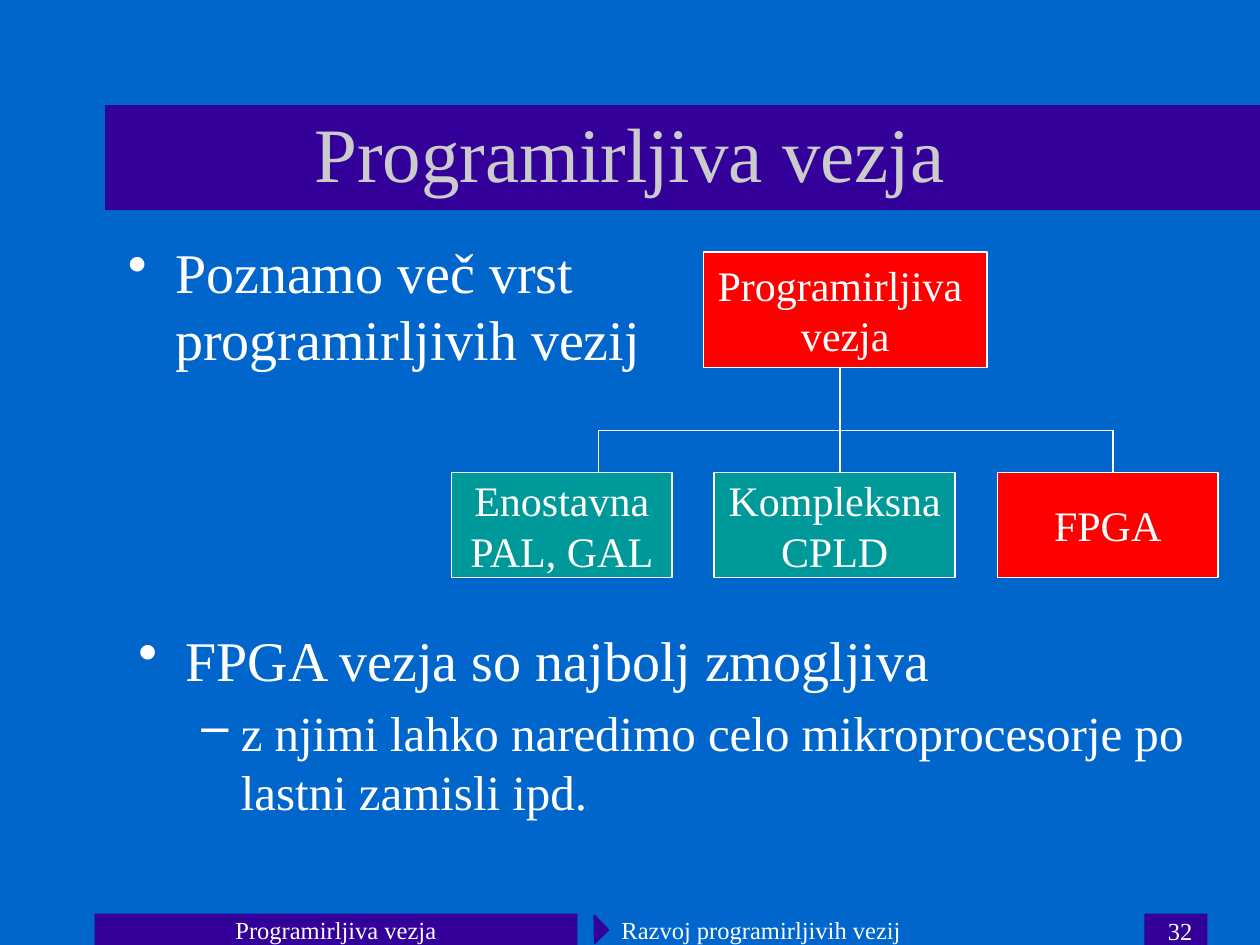
from lxml.etree import SubElement
from pptx import Presentation
from pptx.dml.color import RGBColor
from pptx.enum.shapes import MSO_CONNECTOR as CONN, MSO_SHAPE as SHAPE
from pptx.enum.text import MSO_ANCHOR as ANCHOR, PP_ALIGN as ALIGN
from pptx.oxml.ns import qn
from pptx.util import Pt

COLORS = {"back": "0066CC", "band": "330099", "title": "CBCBCB",
          "text": "FFFFFF", "teal": "009999", "red": "FF0000"}
FONT = "Times New Roman"


def rgb(name):
    """Return the named colour."""
    return RGBColor.from_string(COLORS[name])


def add_box(s, box, fill, line=None, kind=SHAPE.RECTANGLE):
    """Add a filled shape with an optional outline."""
    sp = s.shapes.add_shape(kind, *map(Pt, box))
    sp.shadow.inherit = False
    sp.fill.solid()
    sp.fill.fore_color.rgb = rgb(fill)
    if line:
        sp.line.color.rgb = rgb(line)
        sp.line.width = Pt(1)
    else:
        sp.line.fill.background()
    return sp


def add_line(s, x1, y1, x2, y2):
    """Add a thin straight line."""
    c = s.shapes.add_connector(CONN.STRAIGHT, *map(Pt, (x1, y1, x2, y2)))
    c.line.color.rgb = rgb("text")
    c.line.width = Pt(1)
    SubElement(c._element.spPr, qn("a:effectLst"))


def write(p, text, size, align=ALIGN.LEFT, color="text", before=0):
    """Write one run, with the space before it in percent."""
    p.alignment = align
    if before:
        p.space_before = Pt(0)
        spacing = p._p.pPr.find(qn("a:spcBef"))
        spacing.remove(spacing[0])
        SubElement(spacing, qn("a:spcPct"), val=str(before * 1000))
    r = p.add_run()
    r.text = text
    r.font.name = FONT
    r.font.size = Pt(size)
    r.font.color.rgb = rgb(color)


def add_text(s, box, anchor=ANCHOR.TOP):
    """Add a wrapping text box and return its text frame."""
    tf = s.shapes.add_textbox(*map(Pt, box)).text_frame
    tf.word_wrap = True
    tf.vertical_anchor = anchor
    return tf


def add_title(s, box, text):
    """Place the title over its band."""
    x, y, w, h = box
    add_box(s, (x + 6, y + 12, 720 - x - 6, 60), "band")
    tf = add_text(s, box, ANCHOR.MIDDLE)
    write(tf.paragraphs[0], text, 44, ALIGN.CENTER, "title")


def add_bullets(s, box, items):
    """Place bulleted items given as level and text."""
    styles = [("•", 32, 27, -27), ("–", 28, 58.5, -22.5)]
    tf = add_text(s, box)
    for i, (level, text) in enumerate(items):
        char, size, margin, indent = styles[level]
        p = tf.add_paragraph() if i else tf.paragraphs[0]
        p.level = level
        write(p, text, size, before=20)
        pPr = p._p.get_or_add_pPr()
        pPr.set("marL", str(Pt(margin)))
        pPr.set("indent", str(Pt(indent)))
        SubElement(pPr, qn("a:buChar"), char=char)


def add_node(s, box, fill, lines):
    """Place one labelled box of the tree."""
    tf = add_box(s, box, fill, "text").text_frame
    tf.word_wrap = False
    tf.vertical_anchor = ANCHOR.MIDDLE
    for i, text in enumerate(lines):
        p = tf.add_paragraph() if i else tf.paragraphs[0]
        write(p, text, 24, ALIGN.CENTER)


def add_tree(s, box):
    """Place the root, its three kinds and the branches."""
    x, y, w, h = box
    bus, leaf_y, leaf_h, gap = y + 102, y + 126, 60, 24
    leaves = [(126, 84, "teal", ["Enostavna", "PAL, GAL"]),
              (138, 222, "teal", ["Kompleksna", "CPLD"]),
              (126, 378, "red", ["FPGA"])]
    add_line(s, x + 222, y + 66, x + 222, bus)
    add_line(s, x + leaves[0][1], bus, x + leaves[-1][1], bus)
    left = x
    for width, branch, fill, lines in leaves:
        add_line(s, x + branch, bus, x + branch, leaf_y)
        add_node(s, (left, leaf_y, width, leaf_h), fill, lines)
        left += width + gap
    add_node(s, (x + 144, y, 162, 66), "red", ["Programirljiva ", "vezja"])


def add_footer(s, box):
    """Place the footer bars, marker, labels and page number."""
    x, y, w, h = box
    add_box(s, (x, y, 276, h), "band")
    add_box(s, (x + 600, y, 36, h), "band")
    marker = add_box(s, (x + 280, y + 3.6, 11.5, 10.8), "band", "band",
                     SHAPE.RIGHT_TRIANGLE)
    marker.rotation = 225.8
    labels = [(0, -3, 276, 24, ANCHOR.MIDDLE, ALIGN.CENTER, "Programirljiva vezja"),
              (294, -3, 276, 24, ANCHOR.MIDDLE, ALIGN.LEFT,
               "Razvoj programirljivih vezij"),
              (484.5, -2, 150, 18, ANCHOR.TOP, ALIGN.RIGHT, "32")]
    for dx, dy, width, height, anchor, align, text in labels:
        tf = add_text(s, (x + dx, y + dy, width, height), anchor)
        write(tf.paragraphs[0], text, 14, align, before=50)


def main():
    """Build the slide and save it."""
    prs = Presentation()
    prs.slide_width, prs.slide_height = Pt(720), Pt(540)
    s = prs.slides.add_slide(prs.slide_layouts[6])
    s.background.fill.solid()
    s.background.fill.fore_color.rgb = rgb("back")
    add_title(s, (54, 48, 612, 78), "Programirljiva vezja")
    add_bullets(s, (66, 132, 330, 102),
                [(0, "Poznamo več vrst programirljivih vezij")])
    add_tree(s, (258, 144, 438, 186))
    add_bullets(s, (72, 354, 624, 102),
                [(0, "FPGA vezja so najbolj zmogljiva"),
                 (1, "z njimi lahko naredimo celo mikroprocesorje po lastni "
                     "zamisli ipd.")])
    add_footer(s, (54, 522, 636, 18))
    prs.save("out.pptx")


if __name__ == "__main__":
    main()
